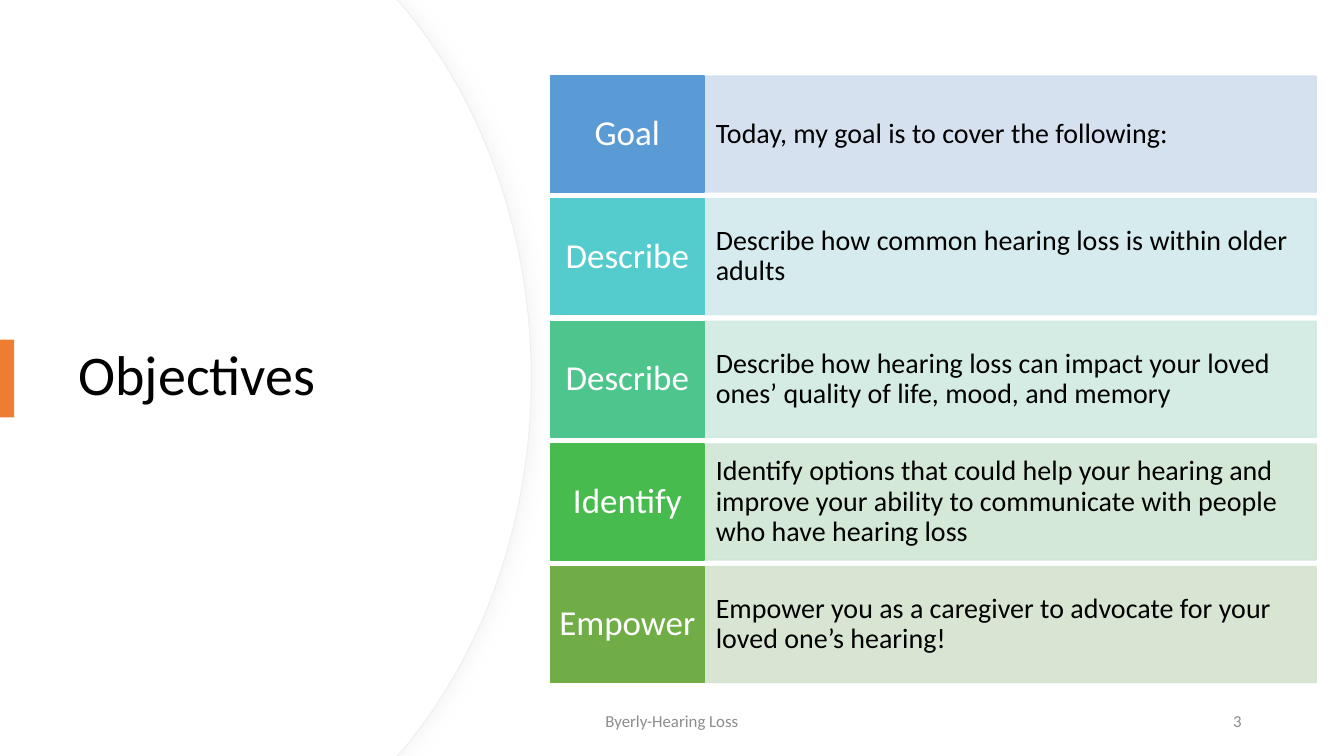
from lxml.etree import SubElement
from pptx import Presentation
from pptx.dml.color import RGBColor
from pptx.enum.shapes import MSO_SHAPE
from pptx.enum.text import MSO_ANCHOR, PP_ALIGN
from pptx.oxml.ns import qn
from pptx.util import Cm, Pt

WIDE, HIGH = 33.87, 19.05
FONT = "Calibri"
ROWS = [
    ("Goal", "Today, my goal is to cover the following:", "5B9BD5", "D2DEEF"),
    ("Describe", "Describe how common hearing loss is within older adults",
     "54CCCD", "D1E9ED"),
    ("Describe", "Describe how hearing loss can impact your loved ones’ "
     "quality of life, mood, and memory", "4DC58D", "D0EAE1"),
    ("Identify", "Identify options that could help your hearing and improve "
     "your ability to communicate with people who have hearing loss",
     "48BB4F", "D0E6D4"),
    ("Empower", "Empower you as a caregiver to advocate for your loved "
     "one’s hearing!", "70AD47", "D5E3CF"),
]


def color(code):
    return RGBColor.from_string(code)


def place(shape, left, top, width, height):
    shape.left, shape.top = Cm(left), Cm(top)
    shape.width, shape.height = Cm(width), Cm(height)


def write(shape, text, size, code, align, inset=0.25, pace=0.9):
    frame = shape.text_frame
    frame.text = text
    frame.word_wrap = True
    frame.vertical_anchor = MSO_ANCHOR.MIDDLE
    frame.margin_left = frame.margin_right = Cm(inset)
    line = frame.paragraphs[0]
    line.alignment = align
    line.line_spacing = pace
    line.font.size = Pt(size)
    line.font.name = FONT
    line.font.color.rgb = color(code)


def fade(fill, share):
    tint = fill._xPr.find(qn("a:solidFill"))[0]
    SubElement(tint, qn("a:alpha"), val=str(share * 1000))


def block(slide, left, top, width, height, code, share=100):
    shape = slide.shapes.add_shape(
        MSO_SHAPE.RECTANGLE, Cm(left), Cm(top), Cm(width), Cm(height))
    shape.shadow.inherit = False
    shape.fill.solid()
    shape.fill.fore_color.rgb = color(code)
    shape.line.color.rgb = color(code)
    shape.line.width = Pt(1)
    if share < 100:
        fade(shape.fill, share)
        fade(shape.line.fill, share)
    return shape


def curve(shape, first, count):
    lines = list(shape._element.iter(qn("a:lnTo")))[first:first + count]
    for i in range(0, count, 3):
        bend = SubElement(lines[i].getparent(), qn("a:cubicBezTo"))
        lines[i].addprevious(bend)
        for line in lines[i:i + 3]:
            bend.append(line[0])
            line.getparent().remove(line)


def panel(slide, width, height):
    half = [(width - 3.38, 0), (width - 3.2, 0.2),
            (width - 1.22, 2.59), (width, 5.89)]
    low = [(x, height - y) for x, y in reversed(half)]
    points = half + [(width, height / 2)] + low + [(0, height)]
    pen = slide.shapes.build_freeform(0, 0)
    pen.add_line_segments([(Cm(x), Cm(y)) for x, y in points], close=True)
    shape = pen.convert_to_shape()
    curve(shape, 2, 6)
    shape.shadow.inherit = False
    shape.fill.solid()
    shape.fill.fore_color.rgb = color("FFFFFF")
    shape.line.fill.background()
    return shape


def edge(shape):
    shape.line.color.rgb = color("EFEFEF")
    shape.line.width = Pt(0.75)
    glow = SubElement(
        shape._element.spPr.find(qn("a:effectLst")), qn("a:outerShdw"),
        blurRad=str(Pt(12)), dist=str(Pt(3)), dir="0", algn="l",
        rotWithShape="0")
    tint = SubElement(glow, qn("a:srgbClr"), val="D9D9D9")
    SubElement(tint, qn("a:alpha"), val="25000")


def head(slide, left, top, width, height):
    edge(panel(slide, 13.39, HIGH))
    panel(slide, 13.36, HIGH)
    title = slide.shapes.title
    slide.shapes._spTree.append(title._element)
    place(title, left, top, width, height)
    write(title, "Objectives", 40, "000000", PP_ALIGN.LEFT)
    accent = block(slide, 0, 8.56, 0.36, 1.96, "ED7D31")
    accent.line.fill.background()


def goals(slide, left, top, width, height):
    gap, label = 0.17, 3.86
    tall = (height - gap * (len(ROWS) - 1)) / len(ROWS)
    for i, (name, text, dark, light) in enumerate(ROWS):
        y = top + i * (tall + gap)
        body = block(slide, left + label, y, width - label, tall, light, 90)
        write(body, text, 20, "000000", PP_ALIGN.LEFT, 0.3)
        tag = block(slide, left, y, label, tall, dark)
        write(tag, name, 25, "FFFFFF", PP_ALIGN.CENTER, 0.15)


def foot(slide, left, top, width, height):
    number = 7.62
    for text, x, wide, align in (
            ("Byerly-Hearing Loss", left, 11.43, PP_ALIGN.CENTER),
            ("3", left + width - number, number, PP_ALIGN.RIGHT)):
        box = slide.shapes.add_textbox(Cm(x), Cm(top), Cm(wide), Cm(height))
        write(box, text, 12, "8C8C8C", align, pace=1.0)


def main():
    deck = Presentation()
    deck.slide_width, deck.slide_height = Cm(WIDE), Cm(HIGH)
    slide = deck.slides.add_slide(deck.slide_layouts[5])
    head(slide, 1.73, 3.23, 10.01, 12.57)
    goals(slide, 13.88, 1.92, 19.29, 15.28)
    foot(slide, 11.22, 17.65, 20.32, 1.02)
    deck.save("out.pptx")


if __name__ == "__main__":
    main()
